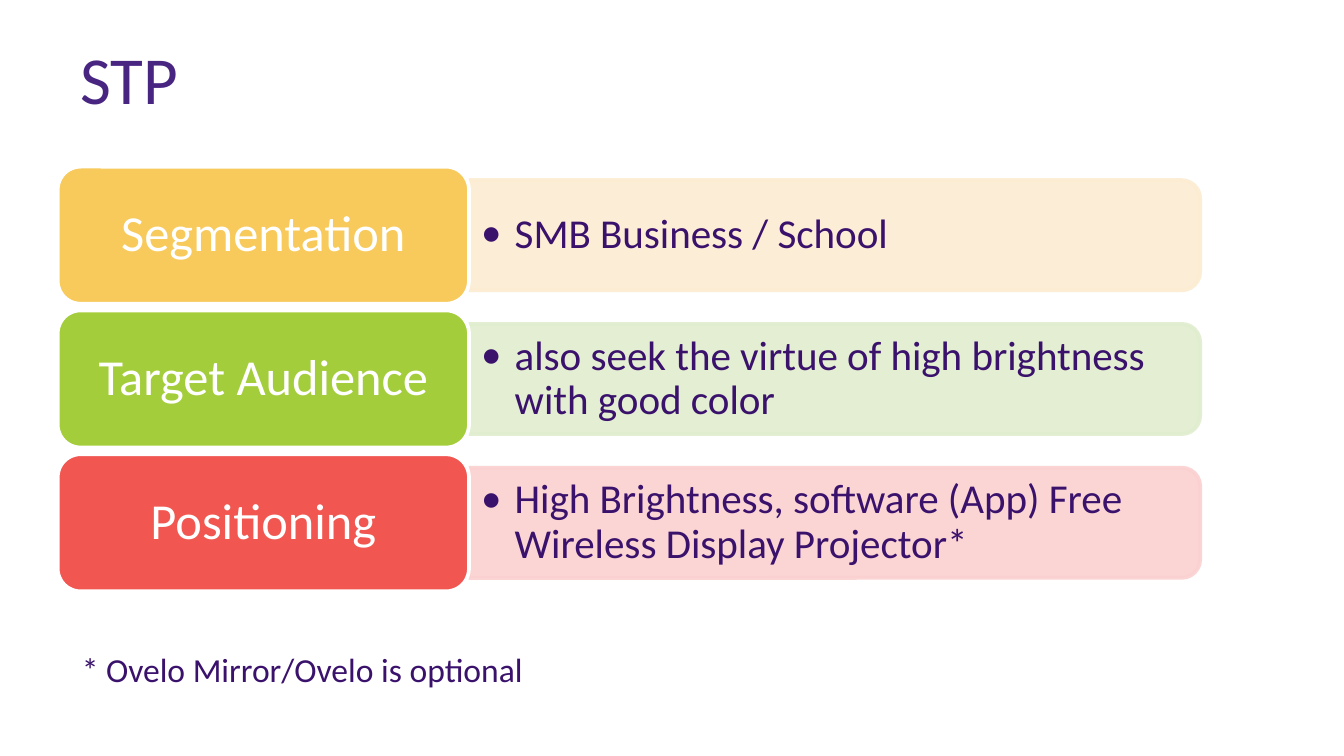
from pptx import Presentation
from pptx.dml.color import RGBColor
from pptx.enum.shapes import MSO_SHAPE
from pptx.enum.text import MSO_ANCHOR, PP_ALIGN
from pptx.oxml.ns import qn
from pptx.util import Inches, Pt
from lxml.etree import SubElement

TITLE = "STP"
NOTE = "* Ovelo Mirror/Ovelo is optional"
ROWS = [
    ("Segmentation", "SMB Business / School", "gold", "cream"),
    ("Target Audience", "also seek the virtue of high brightness with good color",
     "green", "mint"),
    ("Positioning", "High Brightness, software (App) Free Wireless Display Projector*",
     "red", "pink"),
]
COLORS = {
    "title": "492582", "ink": "3A126C", "white": "FFFFFF",
    "gold": "F7CA5B", "green": "A4CD3B", "red": "F15651",
    "cream": "FCECD2", "mint": "E0EDCE", "pink": "FAD1D0",
}
LEFT, TOP, PITCH = 0.43, 1.24, 1.07
LABEL_W, LABEL_H = 3.06, 1.02
BAR_W, BAR_H = 5.44, 0.82


def color(name):
    return RGBColor.from_string(COLORS[name])


def add_bullet(para):
    para.level = 1
    props = para._p.get_or_add_pPr()
    props.set("marL", str(Inches(0.25)))
    props.set("indent", str(Inches(-0.25)))
    SubElement(props, qn("a:buFont"), typeface="Calibri")
    SubElement(props, qn("a:buChar"), char="•")


def write(shape, text, size, ink, pad=(0.1, 0.05), anchor=MSO_ANCHOR.TOP,
          wrap=True, bullet=False):
    frame = shape.text_frame
    frame.word_wrap = wrap
    frame.vertical_anchor = anchor
    frame.margin_left = frame.margin_right = Inches(pad[0])
    frame.margin_top = frame.margin_bottom = Inches(pad[1])
    para = frame.paragraphs[0]
    para.text = text
    if bullet:
        add_bullet(para)
    para.font.name = "Calibri"
    para.font.size = Pt(size)
    para.font.color.rgb = color(ink)
    return para


def add_box(x, y, w, h):
    return slide.shapes.add_textbox(Inches(x), Inches(y), Inches(w), Inches(h))


def add_block(kind, x, y, w, h, fill, line):
    block = slide.shapes.add_shape(kind, Inches(x), Inches(y), Inches(w), Inches(h))
    block.shadow.inherit = False
    block.fill.solid()
    block.fill.fore_color.rgb = color(fill)
    block.line.color.rgb = color(line)
    block.line.width = Pt(2)
    return block


def add_bar(x, mid, tint):
    """Bar rounded on its right end: an upright shape turned a quarter."""
    bar = add_block(MSO_SHAPE.ROUND_2_SAME_RECTANGLE, x + (BAR_W - BAR_H) / 2,
                    mid - BAR_W / 2, BAR_H, BAR_W, tint, tint)
    bar.rotation = 90
    for tone in bar._element.spPr.iter(qn("a:srgbClr")):
        SubElement(tone, qn("a:alpha"), val="90000")


def add_row(y, label, text, fill, tint):
    mid = y + LABEL_H / 2
    x = LEFT + LABEL_W
    add_bar(x, mid, tint)

    box = add_box(x, mid - 0.37, 5.4, 0.74)
    para = write(box, text, 22, "ink", (0.09, 0.05), MSO_ANCHOR.MIDDLE, bullet=True)
    para.line_spacing = 0.9

    block = add_block(MSO_SHAPE.ROUNDED_RECTANGLE, LEFT, y, LABEL_W, LABEL_H,
                      fill, "white")
    para = write(block, label, 27, "white", (0.11, 0.06), MSO_ANCHOR.MIDDLE)
    para.alignment = PP_ALIGN.CENTER
    para.line_spacing = 0.9


deck = Presentation()
deck.slide_width = Inches(10)
deck.slide_height = deck.slide_width * 9 // 16
slide = deck.slides.add_slide(deck.slide_layouts[6])

write(add_box(0.5, 0.23, 8.12, 0.99), TITLE, 36, "title")
for i, row in enumerate(ROWS):
    add_row(TOP + i * PITCH, *row)
write(add_box(0.51, 4.78, 4.02, 0.4), NOTE, 18, "ink", wrap=False)

deck.save("out.pptx")
